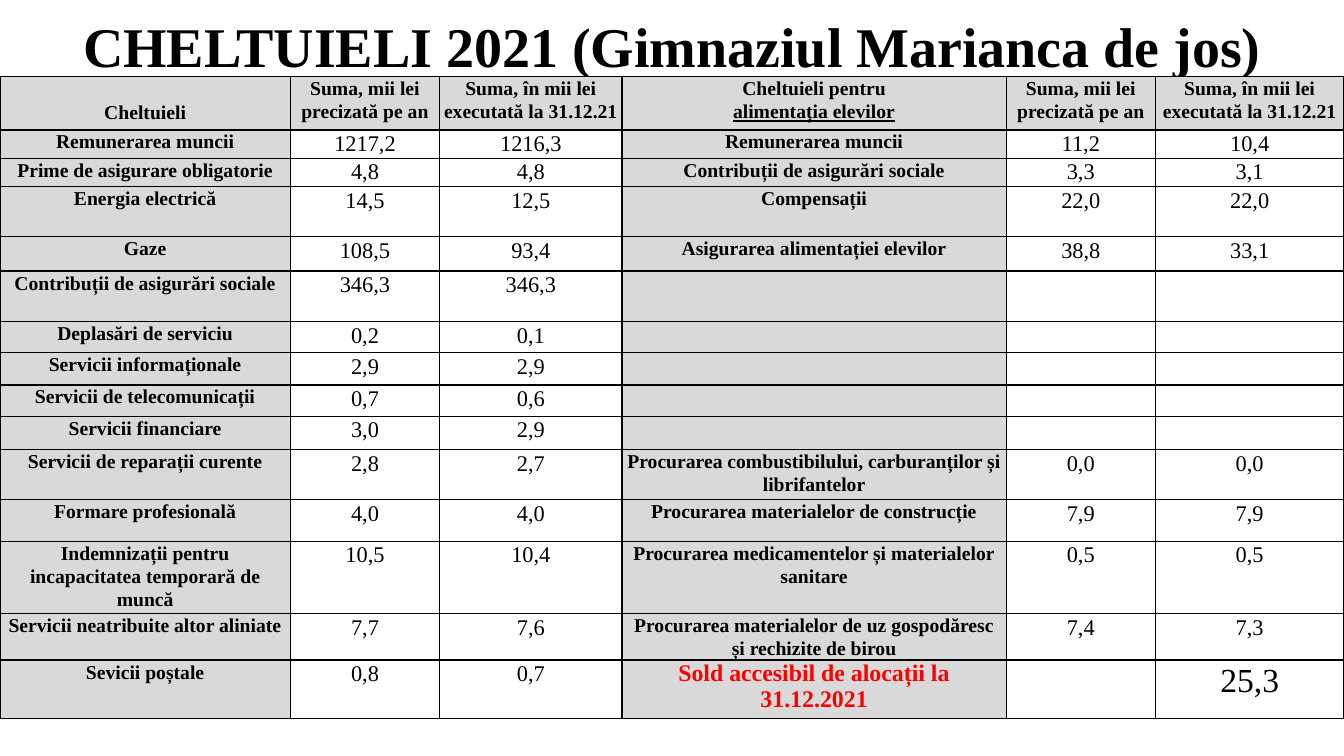
from dataclasses import dataclass

from lxml import etree
from pptx import Presentation
from pptx import util as u
from pptx.dml.color import RGBColor
from pptx.enum import text
from pptx.oxml import ns


@dataclass(frozen=True)
class Theme:
    font: str = "Times New Roman"
    ink: str = "000000"
    accent: str = "FF0000"
    paper: str = "FFFFFF"
    label_fill: str = "D9D9D9"
    title_size: float = 40
    label_size: float = 14
    value_size: float = 16
    balance_label_size: float = 17
    balance_size: float = 24
    line_spacing: float = 1.07
    border_width: float = 1


TITLE = "CHELTUIELI 2021 (Gimnaziul Marianca de jos)"
COLUMN_WIDTHS = [2.88, 1.48, 1.81, 3.81, 1.48, 1.87]
LABEL_COLUMNS = (0, 3)

PLANNED = "Suma, mii lei\nprecizată pe an"
EXECUTED = "Suma, în mii lei\nexecutată la 31.12.21"
HEADER = ["Cheltuieli", PLANNED, EXECUTED,
          "Cheltuieli pentru\nalimentația elevilor", PLANNED, EXECUTED]
HEADER_HEIGHT = 0.53

# Row height, then the expense, planned and executed sums of both halves
EXPENSES = [
    (0.28, "Remunerarea muncii", "1217,2", "1216,3",
     "Remunerarea muncii", "11,2", "10,4"),
    (0.28, "Prime de asigurare obligatorie", "4,8", "4,8",
     "Contribuții de asigurări sociale", "3,3", "3,1"),
    (0.5, "Energia electrică", "14,5", "12,5", "Compensații", "22,0", "22,0"),
    (0.34, "Gaze", "108,5", "93,4",
     "Asigurarea alimentației elevilor", "38,8", "33,1"),
    (0.5, "Contribuții de asigurări sociale", "346,3", "346,3", "", "", ""),
    (0.31, "Deplasări de serviciu", "0,2", "0,1", "", "", ""),
    (0.32, "Servicii informaționale", "2,9", "2,9", "", "", ""),
    (0.31, "Servicii de telecomunicații", "0,7", "0,6", "", "", ""),
    (0.33, "Servicii financiare", "3,0", "2,9", "", "", ""),
    (0.5, "Servicii de reparații curente", "2,8", "2,7",
     "Procurarea combustibilului, carburanților și librifantelor", "0,0", "0,0"),
    (0.41, "Formare profesională", "4,0", "4,0",
     "Procurarea materialelor de construcție", "7,9", "7,9"),
    (0.72, "Indemnizații pentru incapacitatea temporară de muncă", "10,5", "10,4",
     "Procurarea medicamentelor și materialelor sanitare", "0,5", "0,5"),
    (0.46, "Servicii neatribuite altor aliniate", "7,7", "7,6",
     "Procurarea materialelor de uz gospodăresc și rechizite de birou", "7,4", "7,3"),
    (0.58, "Sevicii poștale", "0,8", "0,7",
     "Sold accesibil de alocații la 31.12.2021", "", "25,3"),
]


class ExpensePage:
    def __init__(self, deck, theme):
        self.theme = theme
        self.page = deck.slides.add_slide(deck.slide_layouts[5])

    def put_text(self, frame, content, *, size, bold=False, color=None, spacing=1.0):
        """Fill a text frame with one centred paragraph for each line."""
        frame.word_wrap = True
        for index, line in enumerate(content.split("\n")):
            para = frame.add_paragraph() if index else frame.paragraphs[0]
            para.alignment = text.PP_ALIGN.CENTER
            para.line_spacing = spacing
            span = para.add_run()
            span.text = line
            span.font.name = self.theme.font
            span.font.size = u.Pt(size)
            span.font.bold = bold
            span.font.color.rgb = RGBColor.from_string(color or self.theme.ink)

    def title(self, content):
        box = self.page.shapes.title
        box.left, box.top = u.Inches(0), u.Inches(0)
        box.width, box.height = u.Inches(13.33), u.Inches(0.9)
        box.fill.solid()
        box.fill.fore_color.rgb = RGBColor.from_string(self.theme.paper)
        box.text_frame.vertical_anchor = text.MSO_ANCHOR.MIDDLE
        self.put_text(box.text_frame, content, size=self.theme.title_size, bold=True)

    def table(self, rows, heights, widths, *, left, top):
        grid = self.page.shapes.add_table(
            len(rows), len(widths), u.Inches(left), u.Inches(top),
            u.Inches(sum(widths)), u.Inches(sum(heights))).table
        grid.first_row = grid.horz_banding = False
        for column, width in zip(grid.columns, widths):
            column.width = u.Inches(width)
        for row, height in zip(grid.rows, heights):
            row.height = u.Inches(height)
        for row_index, row in enumerate(rows):
            for column_index, content in enumerate(row):
                is_label = row_index == 0 or column_index in LABEL_COLUMNS
                self.cell(grid.cell(row_index, column_index), content, is_label)
        return grid

    def cell(self, cell, content, is_label):
        theme = self.theme
        cell.margin_left = cell.margin_right = u.Inches(0.04)
        cell.margin_top = cell.margin_bottom = 0
        self.borders(cell)
        cell.fill.solid()
        cell.fill.fore_color.rgb = RGBColor.from_string(
            theme.label_fill if is_label else theme.paper)
        if content:
            self.put_text(cell.text_frame, content, bold=is_label,
                          size=theme.label_size if is_label else theme.value_size,
                          spacing=theme.line_spacing)

    def borders(self, cell):
        properties = cell._tc.get_or_add_tcPr()
        for side in ("a:lnL", "a:lnR", "a:lnT", "a:lnB"):
            line = etree.SubElement(properties, ns.qn(side),
                                    w=str(u.Pt(self.theme.border_width)))
            fill = etree.SubElement(line, ns.qn("a:solidFill"))
            etree.SubElement(fill, ns.qn("a:srgbClr"), val=self.theme.ink)

    def emphasise(self, grid):
        """Set apart the header details and the closing balance."""
        theme = self.theme
        grid.cell(0, 0).margin_top = u.Inches(0.24)
        grid.cell(0, 3).text_frame.paragraphs[1].runs[0].font.underline = True
        last = len(grid.rows) - 1
        label = grid.cell(last, 3).text_frame.paragraphs[0]
        label.line_spacing = 1.0
        label.runs[0].font.size = u.Pt(theme.balance_label_size)
        label.runs[0].font.color.rgb = RGBColor.from_string(theme.accent)
        balance = grid.cell(last, 5).text_frame.paragraphs[0].runs[0]
        balance.font.size = u.Pt(theme.balance_size)


def main():
    deck = Presentation()
    deck.slide_width, deck.slide_height = u.Inches(13.33), u.Inches(7.5)
    page = ExpensePage(deck, Theme())
    page.title(TITLE)
    rows = [HEADER] + [row[1:] for row in EXPENSES]
    heights = [HEADER_HEIGHT] + [row[0] for row in EXPENSES]
    grid = page.table(rows, heights, COLUMN_WIDTHS, left=0, top=0.76)
    page.emphasise(grid)
    deck.save("out.pptx")


if __name__ == "__main__":
    main()
